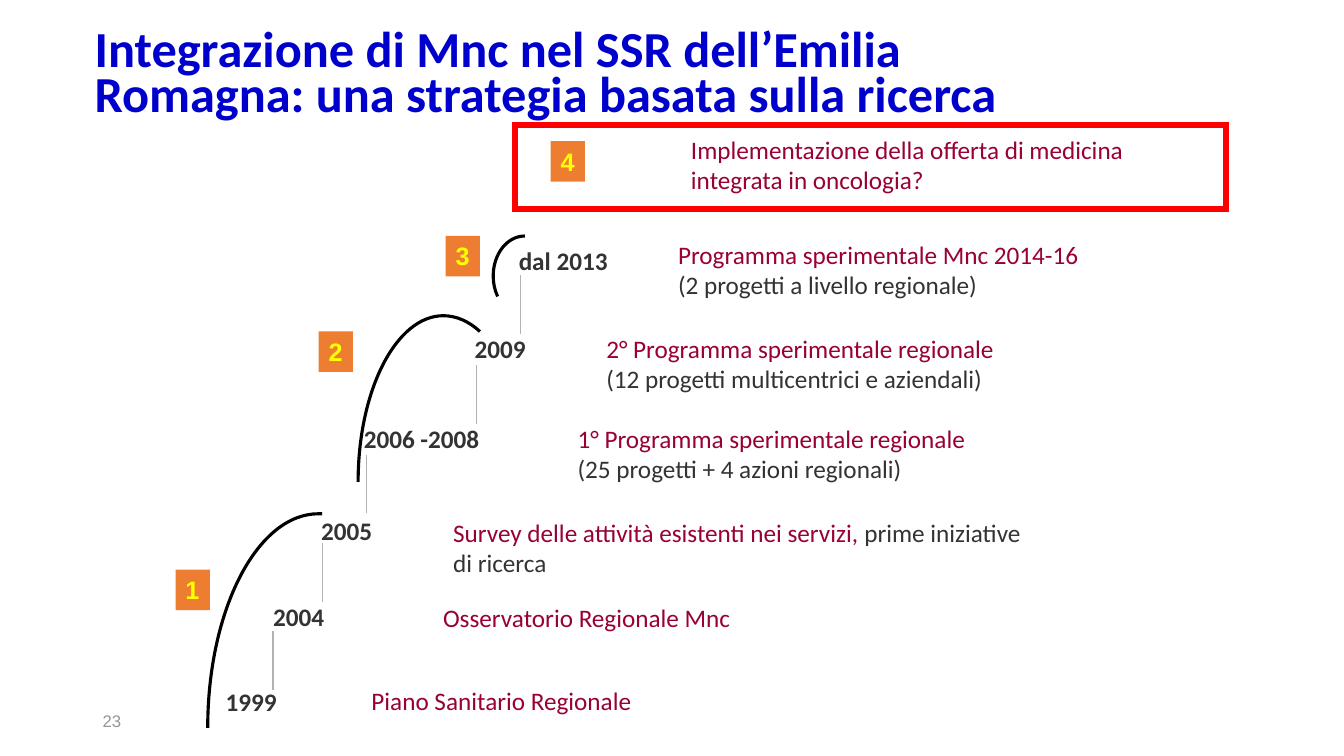
from dataclasses import dataclass
from typing import Optional

from lxml.etree import SubElement
from pptx import Presentation
from pptx.dml.color import RGBColor
from pptx.enum.shapes import MSO_CONNECTOR, MSO_SHAPE
from pptx.enum.text import MSO_ANCHOR, PP_ALIGN
from pptx.oxml.ns import qn
from pptx.util import Pt

COLORS = {
    "title": "0000CC", "topic": "990033", "text": "333333", "number": "969696",
    "drop": "B2B2B2", "badge": "ED7D31", "digit": "FFFF00", "arc": "000000",
    "frame": "FF0000",
}


@dataclass(frozen=True)
class Year:
    label: str
    left: float
    top: float
    width: float = 51
    drop: Optional[tuple[float, float]] = None  # top end of the line below


@dataclass(frozen=True)
class Detail:
    paragraphs: list[list[tuple[str, str]]]  # (text, colour name) spans
    left: float
    top: float
    width: float
    height: float = 51
    align: PP_ALIGN = PP_ALIGN.LEFT
    inset: float = 7.2


@dataclass(frozen=True)
class Badge:
    digit: str
    left: float
    top: float


@dataclass(frozen=True)
class Arc:
    points: list[tuple[float, float]]  # start, then three points per Bézier curve


YEARS = [
    Year("1999", 154, 486.5),
    Year("2004", 188, 426, drop=(195, 450.7)),
    Year("2005", 222.3, 364.3, drop=(230.4, 388)),
    Year("2006 -2008", 252.8, 298.6, 97, drop=(262.1, 324.7)),
    Year("2009", 332, 234.5, drop=(340.5, 260.6)),
    Year("dal 2013", 363.5, 172, 114, drop=(371.5, 196.6)),
]
DETAILS = [
    Detail([[("Piano Sanitario Regionale", "topic")]],
           247.7, 486, 221, 29, PP_ALIGN.CENTER),
    Detail([[("Osservatorio Regionale Mnc", "topic")]],
           288.9, 426.5, 386.6, 29, inset=27.6),
    Detail([[("Survey delle attività esistenti nei servizi, ", "topic"),
             ("prime iniziative di ricerca", "text")]], 316.6, 365.6, 427),
    Detail([[("1° Programma sperimentale regionale", "topic")],
            [("(25 progetti + 4 azioni regionali)", "text")]], 405.5, 298.6, 326),
    Detail([[("2° Programma sperimentale regionale", "topic")],
            [("(12 progetti multicentrici e aziendali)", "text")]], 426, 234.2, 318),
    Detail([[("Programma sperimentale Mnc 2014-16", "topic")],
            [("(2 progetti a livello regionale)", "text")]], 477.3, 167.5, 318),
    Detail([[("Implementazione della offerta di medicina integrata in oncologia?",
              "topic")]], 486.5, 92.5, 379),
]
BADGES = [
    Badge("1", 125.4, 406.8), Badge("2", 227.7, 236.6),
    Badge("3", 318.4, 168.4), Badge("4", 393.4, 100.8),
]
ARCS = [
    Arc([(230.2, 367), (229.3, 367), (228.4, 367), (227.5, 367),
         (183.8, 367), (148.4, 435.6), (148.4, 520)]),
    Arc([(342.8, 236.8), (335, 229.5), (325.8, 225.5), (316.7, 225.5),
         (283.1, 225.5), (255.8, 278.6), (255.8, 344.2)]),
    Arc([(374.9, 168.6), (362.3, 168.6), (352.3, 181.4), (352.3, 197.2),
         (352.3, 202.3), (353.4, 207.4), (355.5, 211.8)]),
]


def color(name: str) -> RGBColor:
    return RGBColor.from_string(COLORS[name])


def write(shape, paragraphs, *, size=18, font="Calibri", bold=False, wrap=True,
          align=PP_ALIGN.LEFT, anchor=MSO_ANCHOR.TOP, spacing=1.0,
          left=7.2, right=7.2) -> None:
    frame = shape.text_frame
    frame.word_wrap = wrap
    frame.vertical_anchor = anchor
    frame.margin_left, frame.margin_right = Pt(left), Pt(right)
    for index, spans in enumerate(paragraphs):
        para = frame.add_paragraph() if index else frame.paragraphs[0]
        para.alignment = align
        para.line_spacing = spacing
        for text, shade in spans:
            span = para.add_run()
            span.text = text
            span.font.name = font
            span.font.size = Pt(size)
            span.font.bold = bold
            span.font.color.rgb = color(shade)


def add_text(page, paragraphs, box_left: float, top: float, width: float,
             height: float, **style) -> None:
    box = page.shapes.add_textbox(Pt(box_left), Pt(top), Pt(width), Pt(height))
    write(box, paragraphs, **style)


def add_rectangle(page, left: float, top: float, width: float, height: float):
    shape = page.shapes.add_shape(
        MSO_SHAPE.RECTANGLE, Pt(left), Pt(top), Pt(width), Pt(height))
    shape.shadow.inherit = False
    return shape


def draw_year(page, year: Year) -> None:
    add_text(page, [[(year.label, "text")]], year.left, year.top, year.width, 29,
             bold=True, right=0)
    if year.drop:
        x, y = Pt(year.drop[0]), Pt(year.drop[1])
        line = page.shapes.add_connector(MSO_CONNECTOR.STRAIGHT, x, y + Pt(42), x, y)
        line.line.color.rgb = color("drop")
        line.line.width = Pt(0.75)
        SubElement(line._element.spPr, qn("a:effectLst"))


def draw_badge(page, badge: Badge) -> None:
    square = add_rectangle(page, badge.left, badge.top, 24.5, 29)
    square.fill.solid()
    square.fill.fore_color.rgb = color("badge")
    square.line.fill.background()
    write(square, [[(badge.digit, "digit")]], font="Arial", bold=True, wrap=False)


def draw_arc(page, arc: Arc) -> None:
    points = [(Pt(x), Pt(y)) for x, y in arc.points]
    builder = page.shapes.build_freeform(*points[0])
    builder.add_line_segments(points[1:], close=False)
    curve = builder.convert_to_shape()
    curve.shadow.inherit = False
    curve.fill.background()
    curve.line.color.rgb = color("arc")
    curve.line.width = Pt(2.25)

    # Join every three segments into one Bézier curve
    segments = list(curve._element.iter(qn("a:lnTo")))
    outline = segments[0].getparent()
    for start in range(0, len(segments), 3):
        bezier = SubElement(outline, qn("a:cubicBezTo"))
        for segment in segments[start:start + 3]:
            bezier.append(segment[0])
            outline.remove(segment)


def main() -> None:
    deck = Presentation()
    deck.slide_width, deck.slide_height = Pt(960), Pt(540)
    page = deck.slides.add_slide(deck.slide_layouts[6])

    # Slide number and title
    add_text(page, [[("23", "number")]], 66.2, 500.4, 216, 29, size=12,
             font="Arial", anchor=MSO_ANCHOR.MIDDLE)
    title = "Integrazione di Mnc nel SSR dell’Emilia Romagna: una strategia basata sulla ricerca"
    add_text(page, [[(title, "title")]], 60.5, 28.3, 669, 52.6, size=36,
             bold=True, anchor=MSO_ANCHOR.MIDDLE, spacing=0.75)

    # Timeline
    for detail in DETAILS:
        add_text(page, detail.paragraphs, detail.left, detail.top, detail.width,
                 detail.height, align=detail.align, left=detail.inset)
    for year in YEARS:
        draw_year(page, year)

    # Phases
    for badge in BADGES:
        draw_badge(page, badge)
    for arc in ARCS:
        draw_arc(page, arc)

    # Frame around the open question
    frame = add_rectangle(page, 367.9, 89.1, 507.6, 60.5)
    frame.fill.background()
    frame.line.color.rgb = color("frame")
    frame.line.width = Pt(4.5)
    SubElement(frame.line._ln, qn("a:miter"), lim="800000")

    deck.save("out.pptx")


if __name__ == "__main__":
    main()
